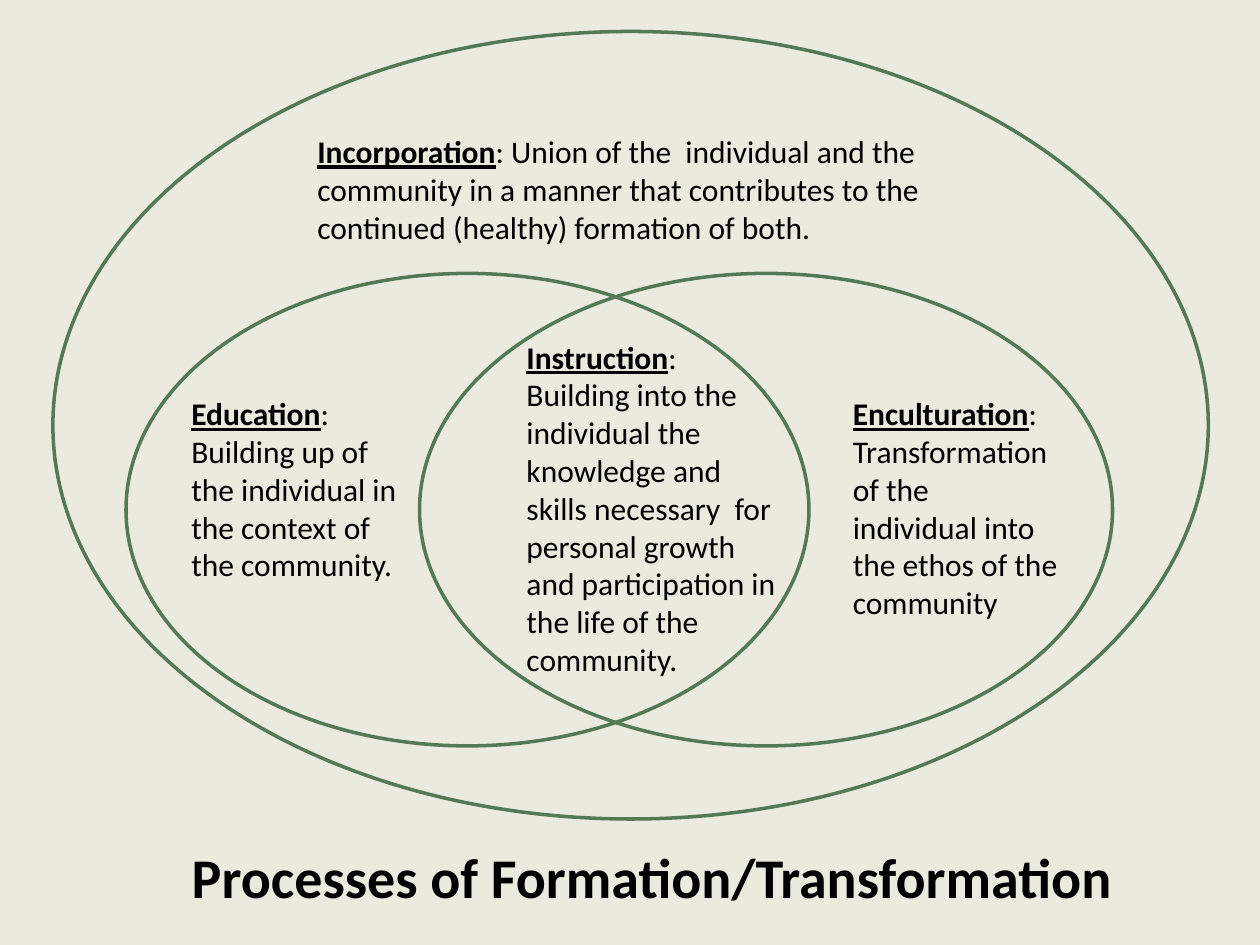
"""Build a slide of nested ovals on the processes of formation and transformation."""
from dataclasses import dataclass

from pptx import Presentation
from pptx.dml.color import RGBColor
from pptx.enum import shapes, text
from pptx.util import Inches, Pt


@dataclass(frozen=True)
class Theme:
    background: RGBColor = RGBColor.from_string("EAEBDE")
    outline: RGBColor = RGBColor.from_string("547957")
    ink: RGBColor = RGBColor.from_string("000000")
    font: str = "Calibri"
    body: Pt = Pt(18)
    title: Pt = Pt(32)
    line: Pt = Pt(2)


def style(p, size):
    p.font.name = theme.font
    p.font.size = size
    p.font.color.rgb = theme.ink


theme = Theme()
prs = Presentation()
prs.slide_width, prs.slide_height = Inches(10), Inches(7.5)
s = prs.slides.add_slide(prs.slide_layouts[5])
s.background.fill.solid()
s.background.fill.fore_color.rgb = theme.background

ovals = [
    (0.42, 0.25, 9.17, 6.25),
    (1, 2.17, 5.42, 3.75),
    (3.33, 2.17, 5.5, 3.75),
]
for box in ovals:
    sp = s.shapes.add_shape(shapes.MSO_SHAPE.OVAL, *map(Inches, box))
    sp.shadow.inherit = False
    sp.fill.background()
    sp.line.color.rgb = theme.outline
    sp.line.width = theme.line

definitions = [
    ((2.42, 1, 5.83, 1.01), "Incorporation",
     ": Union of the  individual and the community in a manner that "
     "contributes to the continued (healthy) formation of both."),
    ((1.42, 3.08, 1.92, 1.62), "Education",
     ": Building up of the individual in the context of the community."),
    ((4.08, 2.63, 2.19, 2.83), "Instruction",
     ": Building into the  individual the knowledge and skills necessary  for "
     "personal growth and participation in the life of the community."),
    ((6.67, 3.08, 1.83, 1.92), "Enculturation",
     ": Transformation of the\nindividual into the ethos of the community"),
]
for box, term, meaning in definitions:
    tf = s.shapes.add_textbox(*map(Inches, box)).text_frame
    tf.word_wrap = True
    tf.auto_size = text.MSO_AUTO_SIZE.SHAPE_TO_FIT_TEXT
    p = tf.paragraphs[0]
    style(p, theme.body)
    r = p.add_run()
    r.text = term
    r.font.bold = r.font.underline = True
    for i, part in enumerate(meaning.split("\n")):
        if i:
            p.add_line_break()
        p.add_run().text = part
    for r in p.runs:
        r.font.name = theme.font
        r.font.size = theme.body
        r.font.color.rgb = theme.ink

title = s.shapes.title
title.left, title.top, title.width, title.height = map(Inches, (1.21, 6.64, 7.93, 0.64))
tf = title.text_frame
tf.text = "Processes of Formation/Transformation"
tf.word_wrap = True
tf.auto_size = text.MSO_AUTO_SIZE.SHAPE_TO_FIT_TEXT
tf.vertical_anchor = text.MSO_ANCHOR.TOP
p = tf.paragraphs[0]
p.alignment = text.PP_ALIGN.CENTER
style(p, theme.title)
p.font.bold = True

prs.save("out.pptx")
